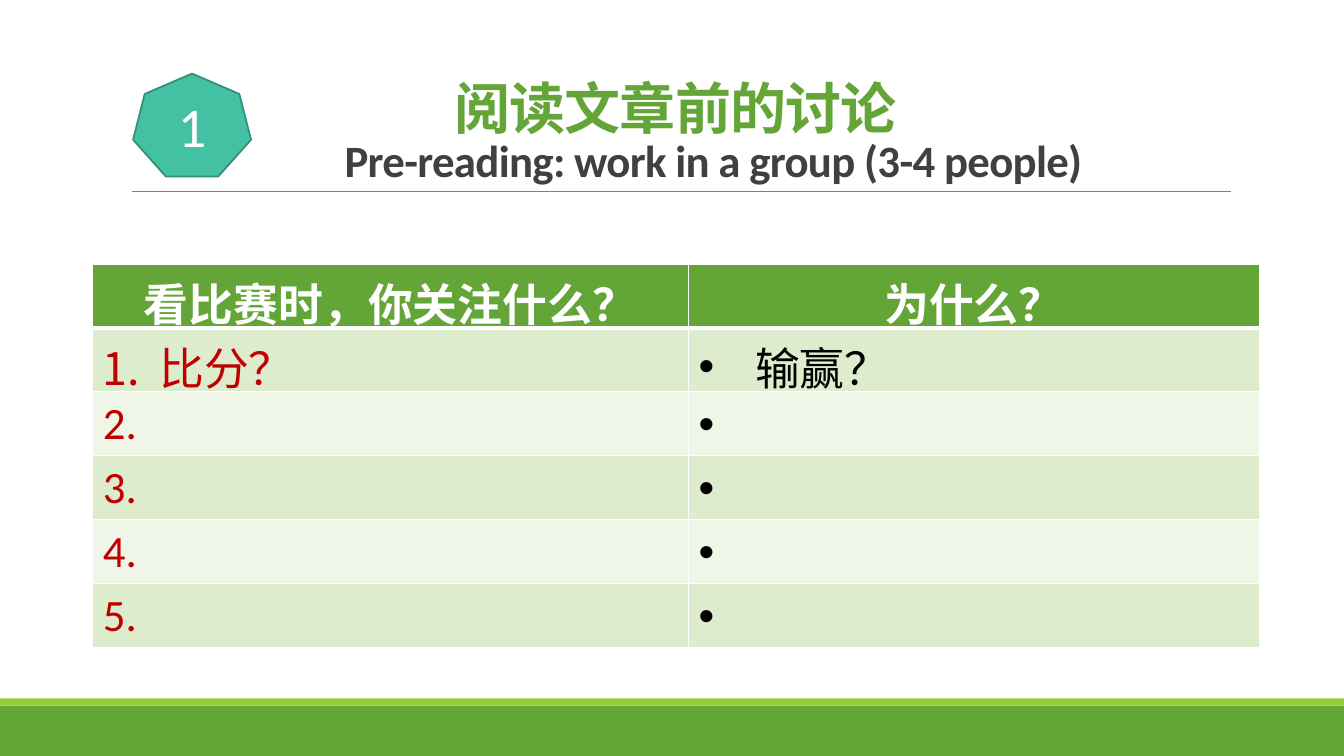
from lxml.etree import SubElement as Sub
from pptx import Presentation
from pptx.dml.color import RGBColor as RGB
from pptx.enum.shapes import MSO_CONNECTOR as CONN, MSO_SHAPE as SHAPE
from pptx.enum.text import MSO_ANCHOR as ANCHOR, PP_ALIGN as ALIGN
from pptx.oxml.ns import qn
from pptx.util import Inches, Pt

GREEN = RGB(0x63, 0xA5, 0x37)
LIME = RGB(0x99, 0xCB, 0x38)
TEAL = RGB(0x44, 0xC1, 0xA3)
PINE = RGB(0x32, 0x8F, 0x79)
GRAY = RGB(0x80, 0x80, 0x80)
DARK = RGB(0x40, 0x40, 0x40)
RED = RGB(0xC0, 0, 0)
BLACK = RGB(0, 0, 0)
WHITE = RGB(0xFF, 0xFF, 0xFF)
BANDS = RGB(0xDE, 0xEC, 0xCE), RGB(0xEF, 0xF6, 0xE8)
FONT = "Calibri"
HEADS = "看比赛时，你关注什么？", "为什么？"
ROWS = [("比分？", "输赢？"), (" ", " "), (" ", " "), ("4.", " "), ("5.", " ")]


def add_run(para, text, size, color, bold=False):
    """Add one styled run and return it."""
    run = para.add_run()
    run.text = text
    font = run.font
    font.name, font.size, font.bold = FONT, Pt(size), bold
    font.color.rgb = color
    return run


def add_form(slide, kind, box, fill, line=None):
    """Add a flat preset shape in the box."""
    form = slide.shapes.add_shape(kind, *map(Inches, box))
    form.shadow.inherit = False
    form.fill.solid()
    form.fill.fore_color.rgb = fill
    if line:
        form.line.color.rgb = line
        form.line.width = Pt(1.25)
    else:
        form.line.fill.background()
    return form


def add_foot(slide, left, top, width, height):
    """Draw the green band with its thin lime edge on top."""
    edge = 0.07
    add_form(slide, SHAPE.RECTANGLE, (left, top + edge, width, height - edge), GREEN)
    add_form(slide, SHAPE.RECTANGLE, (left, top, width, edge), LIME)


def add_title(slide, left, top, width, height):
    """Draw the title lines, the rule below and the numbered badge."""
    base = top + height
    rule = slide.shapes.add_connector(
        CONN.STRAIGHT, *map(Inches, (left + 0.11, base, left + width + 0.01, base)))
    rule.line.color.rgb = GRAY
    rule.line.width = Pt(0.5)
    Sub(rule.element.spPr, qn("a:effectLst"))

    badge = add_form(slide, SHAPE.HEPTAGON,
                     (left + 0.12, top + 0.42, 1.17, 1.02), TEAL, PINE)
    frame = badge.text_frame
    frame.vertical_anchor = ANCHOR.MIDDLE
    frame.paragraphs[0].alignment = ALIGN.CENTER
    add_run(frame.paragraphs[0], "1", 40, WHITE)

    area = slide.shapes.add_textbox(*map(Inches, (left, top, width, height)))
    frame = area.text_frame
    frame.word_wrap = True
    frame.vertical_anchor = ANCHOR.BOTTOM
    first, second = frame.paragraphs[0], frame.add_paragraph()
    second._p.get_or_add_pPr().set("marL", str(Inches(0.75)))
    for para, text, size, color in (
            (first, "阅读文章前的讨论", 40, GREEN),
            (second, "Pre-reading: work in a group (3-4 people)", 32, DARK)):
        para.alignment = ALIGN.CENTER
        para.line_spacing = 0.85
        run = add_run(para, text, size, color, True)
        run.font._element.set("spc", "-50")


def set_mark(para, number=None, dot=False):
    """Give a paragraph a hanging indent and its number or dot."""
    props = para._p.get_or_add_pPr()
    props.set("marL", str(Inches(0.56)))
    props.set("indent", str(-Inches(0.56)))
    if dot:
        Sub(props, qn("a:buFont"), typeface="Arial")
        Sub(props, qn("a:buChar"), char="•")
    elif number:
        Sub(props, qn("a:buFont"), typeface="+mj-lt")
        Sub(props, qn("a:buAutoNum"), type="arabicPeriod", startAt=str(number))


def set_cell(cell, fill, edges):
    """Fill a cell and draw its white borders."""
    props = cell._tc.get_or_add_tcPr()
    for side, width in zip("LRTB", edges):
        line = Sub(props, qn("a:ln" + side), w=str(Pt(width)))
        Sub(Sub(line, qn("a:solidFill")), qn("a:srgbClr"), val=str(WHITE))
    cell.fill.solid()
    cell.fill.fore_color.rgb = fill


def add_grid(slide, left, top, width, height):
    """Draw the discussion table."""
    count = len(ROWS) + 1
    grid = slide.shapes.add_table(
        count, 2, *map(Inches, (left, top, width, height))).table
    for col, size in zip(grid.columns, (5.91, width - 5.91)):
        col.width = Inches(size)
    for row in grid.rows:
        row.height = Inches(height / count)
    for col, text in enumerate(HEADS):
        cell = grid.cell(0, col)
        set_cell(cell, GREEN, (1, 1, 1, 3))
        para = cell.text_frame.paragraphs[0]
        para.alignment = ALIGN.CENTER
        add_run(para, text, 32, WHITE, True)
    for row, texts in enumerate(ROWS, 1):
        for col, text in enumerate(texts):
            cell = grid.cell(row, col)
            set_cell(cell, BANDS[(row - 1) % 2], (1, 1, 3 if row == 1 else 1, 1))
            para = cell.text_frame.paragraphs[0]
            typed = text.startswith(str(row))
            set_mark(para, None if typed else row, col == 1)
            add_run(para, text, 32, BLACK if col else RED)


def main():
    """Build the slide and save it."""
    deck = Presentation()
    deck.slide_width, deck.slide_height = Inches(13.33), Inches(7.5)
    slide = deck.slides.add_slide(deck.slide_layouts[6])
    add_foot(slide, 0, 6.93, 13.33, 0.57)
    add_title(slide, 1.2, 0.31, 11, 1.59)
    add_grid(slide, 0.92, 2.62, 11.57, 3.54)
    deck.save("out.pptx")


if __name__ == "__main__":
    main()
